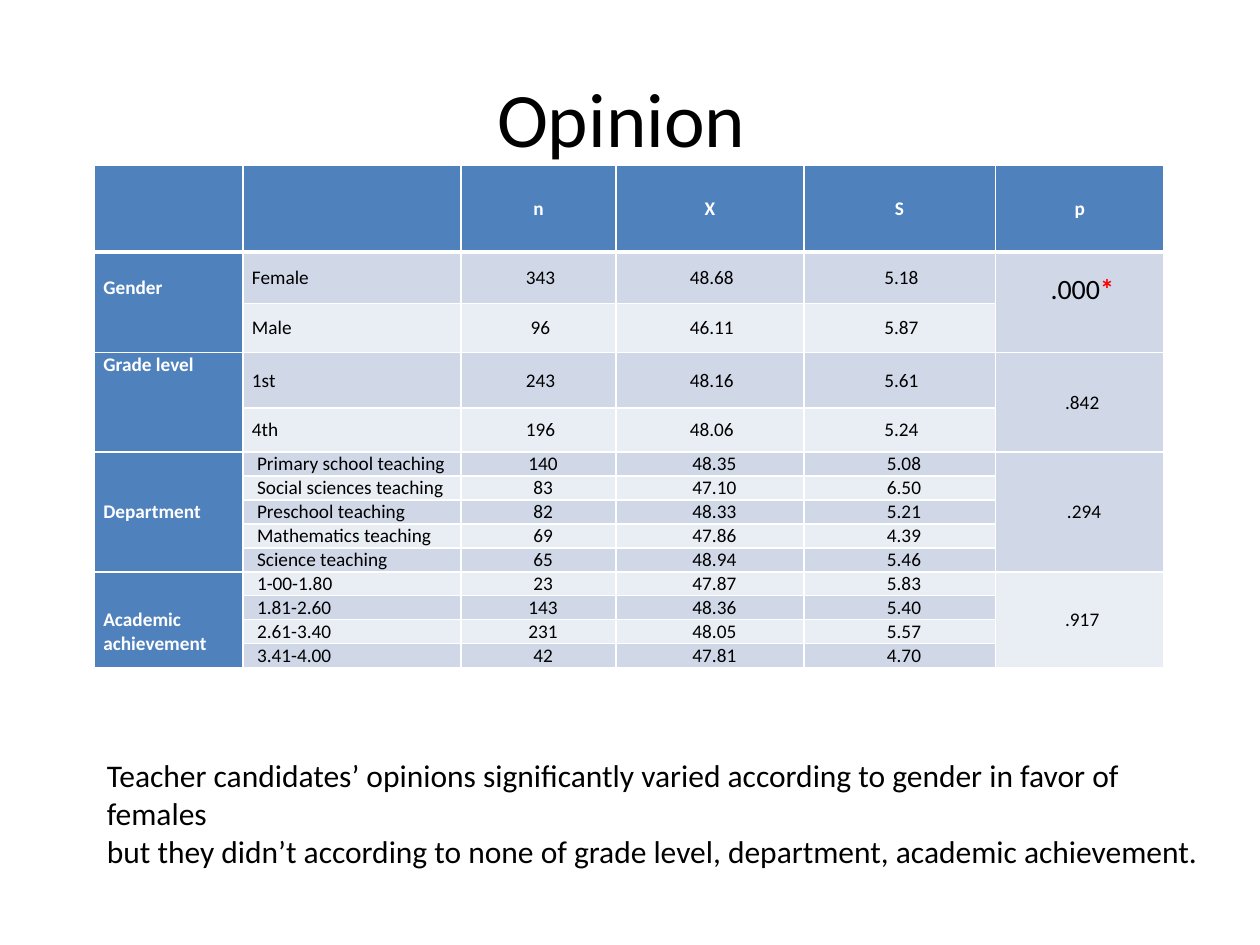
from lxml import etree
from pptx import Presentation
from pptx.dml.color import RGBColor
from pptx.enum.text import MSO_ANCHOR, MSO_AUTO_SIZE, PP_ALIGN
from pptx.oxml.ns import qn
from pptx.util import Inches, Pt

CENTER, LEFT = PP_ALIGN.CENTER, PP_ALIGN.LEFT
MIDDLE, TOP = MSO_ANCHOR.MIDDLE, MSO_ANCHOR.TOP
FIT_SHAPE = MSO_AUTO_SIZE.SHAPE_TO_FIT_TEXT

BLUE, WHITE, BLACK, RED = "4F81BD", "FFFFFF", "000000", "FF0000"
BANDS = ["E9EDF4", "D0D8E8"]
LINE = 0.19

HEADERS = ["", "", "n", "X", "S", "p"]
COLUMN_WIDTHS = [1.18, 1.73, 1.23, 1.49, 1.52, 1.34]
ROW_HEIGHTS = [0.69, 0.41, 0.39, 0.44, 0.35] + [LINE] * 9

GROUPS = [
    {"label": "Gender", "p": [(".000", {}), ("*", {"bold": True, "color": RED})],
     "label_format": {"anchor": TOP, "margin_top": LINE},
     "p_format": {"size": 16, "margin_bottom": LINE, "indent": 0.04},
     "rows": [["Female", "343", "48.68", "5.18"],
              ["Male", "96", "46.11", "5.87"]]},
    {"label": "Grade level", "p": [(".842", {})],
     "label_format": {"anchor": TOP}, "p_format": {"indent": 0.04},
     "rows": [["1st", "243", "48.16", "5.61"],
              ["4th", "196", "48.06", "5.24"]]},
    {"label": "Department", "p": [(".294", {})], "indent": 0.04,
     "label_format": {}, "p_format": {"indent": 0.07},
     "rows": [["Primary school teaching", "140", "48.35", "5.08"],
              ["Social sciences teaching", "83", "47.10", "6.50"],
              ["Preschool teaching", "82", "48.33", "5.21"],
              ["Mathematics teaching", "69", "47.86", "4.39"],
              ["Science teaching", "65", "48.94", "5.46"]]},
    {"label": "Academic achievement", "p": [(".917", {})], "indent": 0.04,
     "label_format": {"margin_top": LINE}, "p_format": {"indent": 0.04},
     "rows": [["1-00-1.80", "23", "47.87", "5.83"],
              ["1.81-2.60", "143", "48.36", "5.40"],
              ["2.61-3.40", "231", "48.05", "5.57"],
              ["3.41-4.00", "42", "47.81", "4.70"]]},
]

NOTE = [
    "Teacher candidates’ opinions significantly varied according to gender in favor of",
    "females",
    "but they didn’t according to none of grade level, department, academic achievement.",
]


def color(value):
    return RGBColor.from_string(value)


def set_attributes(target, values):
    for name, value in values.items():
        setattr(target, name, value)


def add_run(paragraph, text, size, text_color=BLACK, bold=False):
    run = paragraph.add_run()
    run.text = text
    set_attributes(run.font, {"name": "Calibri", "size": Pt(size), "bold": bold})
    run.font.color.rgb = color(text_color)


def set_borders(cell, top=1, bottom=1):
    properties = cell._tc.get_or_add_tcPr()
    for side, width in {"L": 1, "R": 1, "T": top, "B": bottom}.items():
        line = etree.SubElement(properties, qn(f"a:ln{side}"), w=str(Pt(width)))
        fill = etree.SubElement(line, qn("a:solidFill"))
        etree.SubElement(fill, qn("a:srgbClr"), val=WHITE)


def style_cell(cell, fill, row):
    set_borders(cell, top=3 if row == 1 else 1, bottom=3 if row == 0 else 1)
    cell.fill.solid()
    cell.fill.fore_color.rgb = color(fill)


def write_cell(cell, runs, align=CENTER, anchor=MIDDLE, size=11, text_color=BLACK,
               bold=False, indent=0, margin_top=0, margin_bottom=0):
    set_attributes(cell, {
        "vertical_anchor": anchor,
        "margin_left": Inches(0.07), "margin_right": Inches(0.07),
        "margin_top": Inches(margin_top), "margin_bottom": Inches(margin_bottom),
    })
    paragraph = cell.text_frame.paragraphs[0]
    paragraph.alignment = align
    if indent:
        paragraph._p.get_or_add_pPr().set("marL", str(Inches(indent)))
    for text, changes in runs:
        run_format = {"size": size, "text_color": text_color, "bold": bold}
        if "color" in changes:
            run_format.update(text_color=changes["color"], bold=changes["bold"])
        add_run(paragraph, text, **run_format)


def add_group(table, first_row, group):
    last_row = first_row + len(group["rows"]) - 1
    indent = group.get("indent", 0)
    for row, values in enumerate(group["rows"], first_row):
        style_cell(table.cell(row, 0), BLUE, row)
        style_cell(table.cell(row, 5), BANDS[first_row % 2], row)
        for column, value in enumerate(values, 1):
            cell = table.cell(row, column)
            style_cell(cell, BANDS[row % 2], row)
            if column == 1:
                write_cell(cell, [(value, {})], align=LEFT, indent=indent)
            else:
                write_cell(cell, [(value, {})], indent=indent + 0.03)
    for column in (0, 5):
        table.cell(first_row, column).merge(table.cell(last_row, column))
    write_cell(table.cell(first_row, 0), [(group["label"], {})], align=LEFT,
               text_color=WHITE, bold=True, **group["label_format"])
    write_cell(table.cell(first_row, 5), group["p"], **group["p_format"])
    return last_row + 1


def add_results_table(slide):
    frame = slide.shapes.add_table(
        len(ROW_HEIGHTS), len(COLUMN_WIDTHS), Inches(0.75), Inches(1.31),
        Inches(sum(COLUMN_WIDTHS)), Inches(sum(ROW_HEIGHTS)))
    table = frame.table
    for column, width in zip(table.columns, COLUMN_WIDTHS):
        column.width = Inches(width)
    for row, height in zip(table.rows, ROW_HEIGHTS):
        row.height = Inches(height)
    for column, header in enumerate(HEADERS):
        cell = table.cell(0, column)
        style_cell(cell, BLUE, 0)
        if header:
            write_cell(cell, [(header, {})], text_color=WHITE, bold=True)
    next_row = 1
    for group in GROUPS:
        next_row = add_group(table, next_row, group)


def add_title(slide, text):
    title = slide.shapes.title
    set_attributes(title, {"left": Inches(0.5), "top": Inches(0.3),
                           "width": Inches(9), "height": Inches(1.25)})
    title.text_frame.vertical_anchor = MIDDLE
    paragraph = title.text_frame.paragraphs[0]
    paragraph.alignment = CENTER
    add_run(paragraph, text, 44)


def add_note(slide, lines):
    box = slide.shapes.add_textbox(Inches(0.75), Inches(5.95), Inches(8.97), Inches(1.01))
    text_frame = box.text_frame
    set_attributes(text_frame, {"word_wrap": False, "auto_size": FIT_SHAPE})
    for index, line in enumerate(lines):
        paragraph = text_frame.add_paragraph() if index else text_frame.paragraphs[0]
        add_run(paragraph, line, 18)


def main():
    presentation = Presentation()
    set_attributes(presentation, {"slide_width": Inches(10), "slide_height": Inches(7.5)})
    slide = presentation.slides.add_slide(presentation.slide_layouts[5])
    add_title(slide, "Opinion ")
    add_results_table(slide)
    add_note(slide, NOTE)
    presentation.save("out.pptx")


if __name__ == "__main__":
    main()
